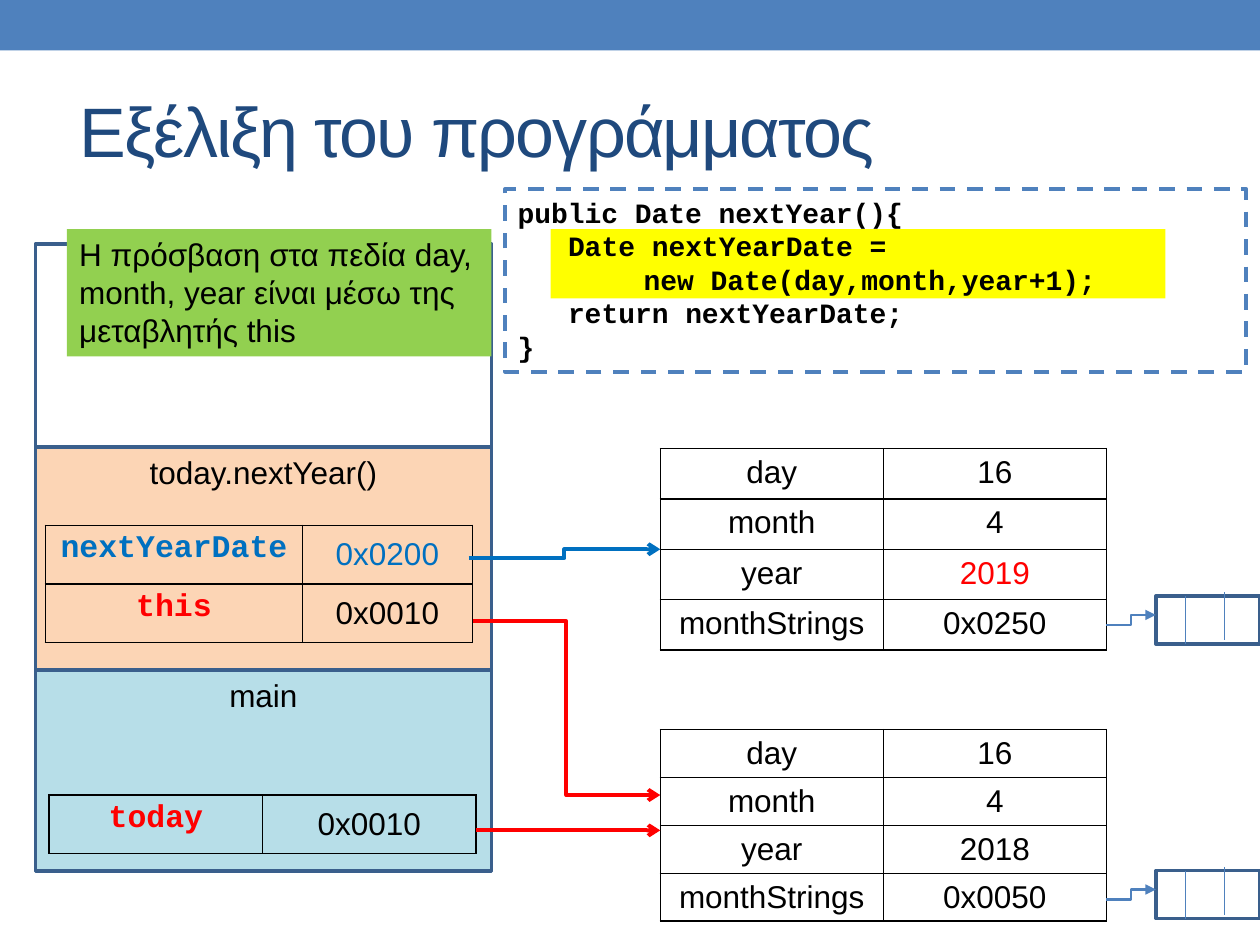
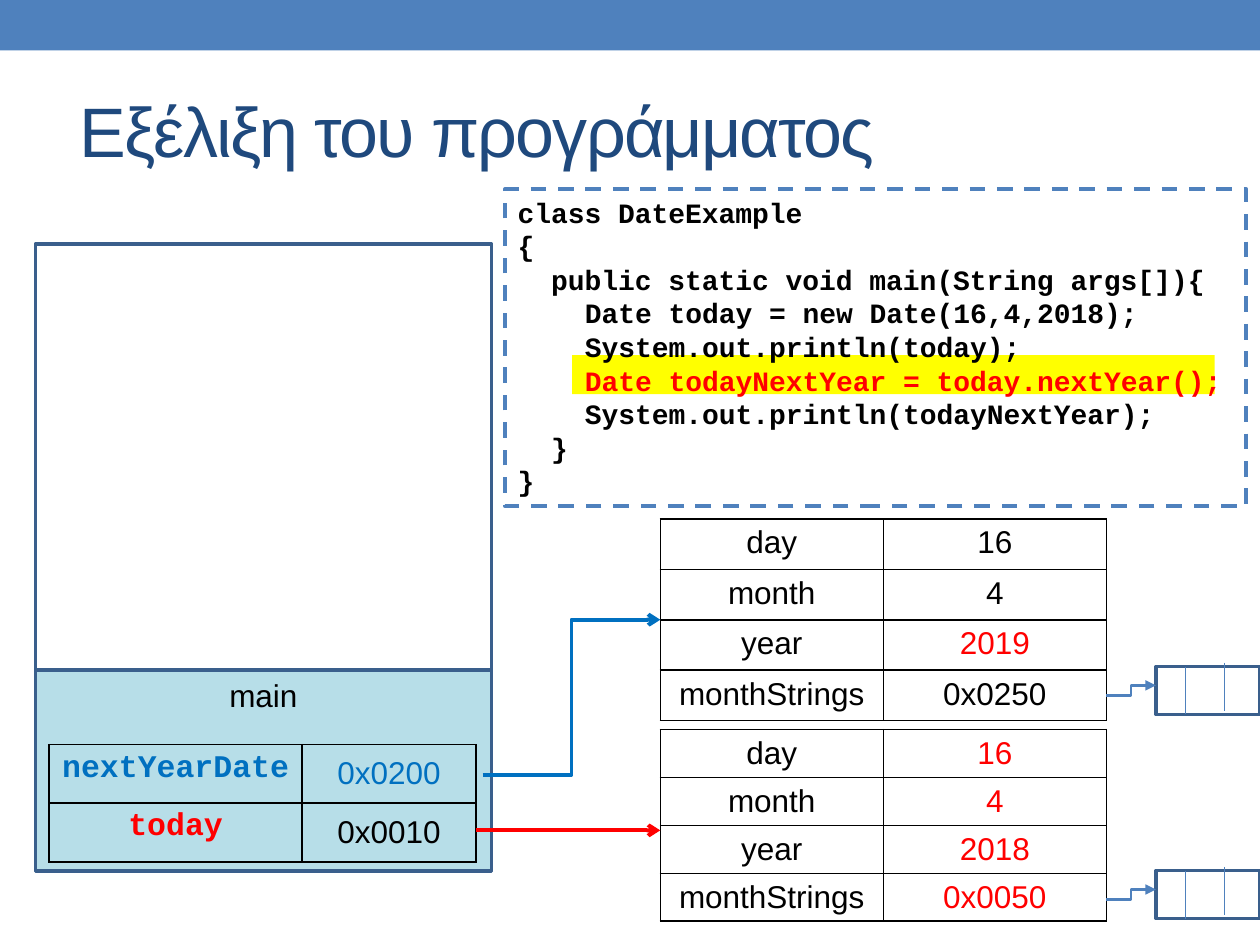
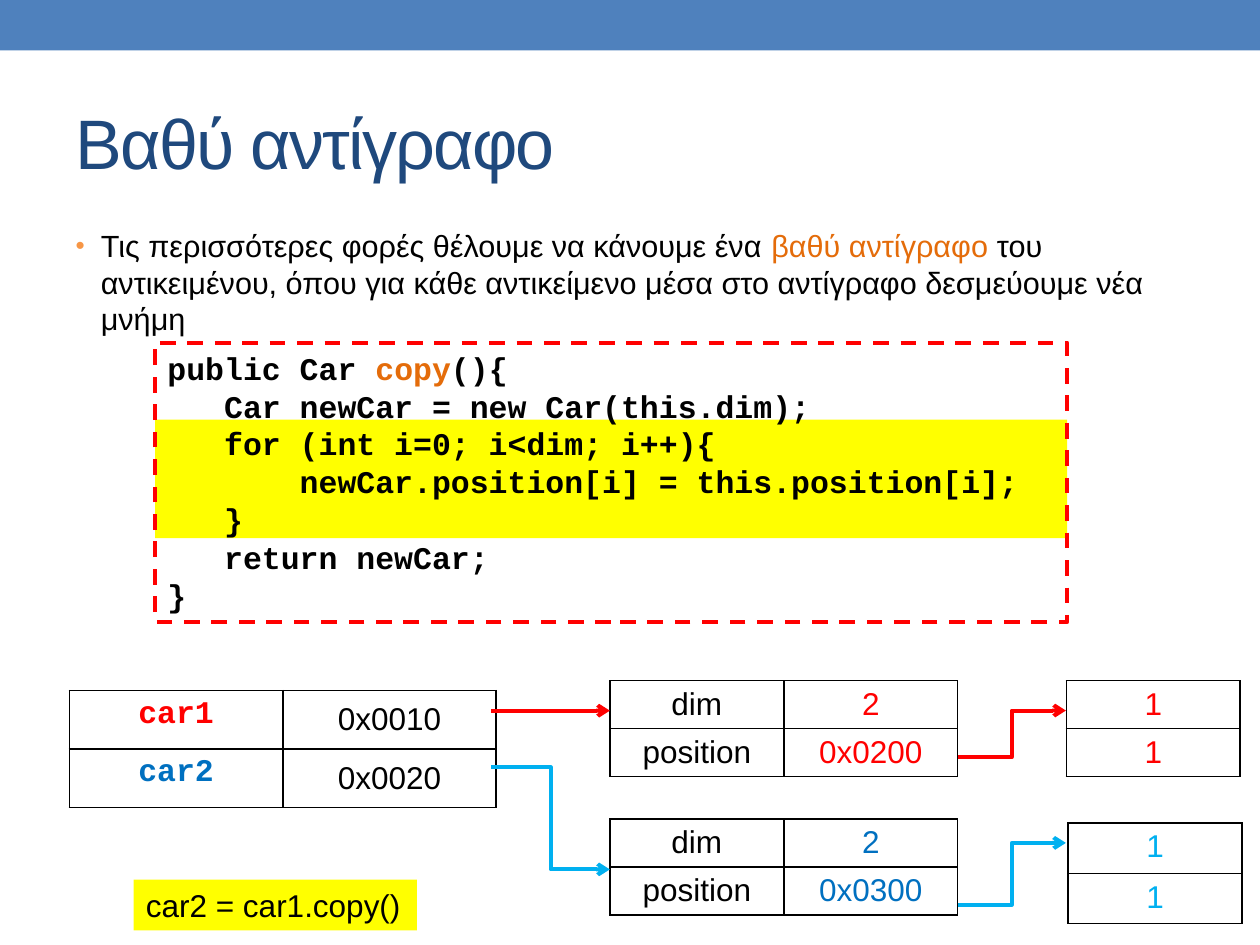
from lxml.etree import SubElement
from pptx import Presentation
from pptx.dml.color import RGBColor
from pptx.enum.dml import MSO_LINE
from pptx.enum.shapes import MSO_CONNECTOR as CONN, MSO_SHAPE as SHAPE
from pptx.enum.text import MSO_ANCHOR as ANCHOR, MSO_AUTO_SIZE as FIT, PP_ALIGN as ALIGN
from pptx.oxml.ns import qn
from pptx.util import Pt

rgb = RGBColor.from_string
BLACK, RED, BLUE, SKY = "000000", "FF0000", "0070C0", "00B0F0"
ACCENT, EDGE, NAVY, ORANGE, YELLOW = "4F81BD", "3A5F8C", "1F497D", "E46C0A", "FFFF00"
SANS, MONO = "Arial", "Courier New"


def style(shape, fill=None, line=None, width=2.08):
    shape.shadow.inherit = False
    if fill:
        shape.fill.solid()
        shape.fill.fore_color.rgb = rgb(fill)
    else:
        shape.fill.background()
    if line:
        shape.line.color.rgb = rgb(line)
        shape.line.width = Pt(width)
    else:
        shape.line.fill.background()


def write(p, text, size=18, font=SANS, bold=False, align=ALIGN.LEFT):
    """Fill a paragraph with a black string or a list of (text, colour) pieces."""
    pieces = [(text, BLACK)] if isinstance(text, str) else text
    p.text = pieces[0][0]
    for piece, _ in pieces[1:]:
        p.add_run().text = piece
    p.alignment = align
    for r, (_, color) in zip(p.runs, pieces):
        r.font.size, r.font.name, r.font.bold = Pt(size), font, bold
        r.font.color.rgb = rgb(color)


# Box kinds: fill, line, line width, dashed, text size, font, bold, alignment
KINDS = {
    "highlight": (YELLOW, None, 0, False, 18, SANS, False, ALIGN.LEFT),
    "note": ("92D050", None, 0, False, 18, SANS, False, ALIGN.LEFT),
    "stack": (None, EDGE, 2.08, False, 18, SANS, False, ALIGN.CENTER),
    "main": ("B7DEE8", EDGE, 2.08, False, 18, SANS, False, ALIGN.CENTER),
    "call": ("FCD5B5", EDGE, 2.08, False, 18, SANS, False, ALIGN.CENTER),
    "code": (None, ACCENT, 2.25, True, 16, MONO, True, ALIGN.LEFT),
    "copy code": (None, RED, 2.25, True, 18, MONO, True, ALIGN.LEFT),
}

# Parts that recur on the memory slides
OBJ_X, OBJ_COLS = 377.3, [127.5, 127.5]
VAR_ROW, ROW, TALL_ROW = 33.5, 27.3, 28.8
main_box = ("main", 20.2, 383, 260.6, 114.5, [(0, "main")])
stack_box = ("stack", 20.2, 139.5, 260.6, 358.5, [])
today_arrow = (272.2, 474.5, OBJ_X, 474.5, RED)
next_year_object = [["day", "16"], ["month", "4"], ["year", [("2019", RED)]],
                    ["monthStrings", "0x0250"]]
today_object = [["day", "16"], ["month", "4"], ["year", "2018"], ["monthStrings", "0x0050"]]
red_today_object = [[name, [(value, RED)]] for name, value in today_object]
next_year_var = [[("nextYearDate", BLUE)], [("0x0200", BLUE)]]
today_var = [[("today", RED)], "0x0010"]
red_ones, sky_ones = [[[("1", c)]] * 1 for c in (RED, RED)], [[[("1", c)]] for c in (SKY, SKY)]

# Boxes: kind, x, y, w, h, lines of (indent, text)
# Tables: x, y, column widths, row height, rows
# Arrows: x1, y1, x2, y2, colour
SLIDES = [
    dict(
        title="Εξέλιξη του προγράμματος", title_at=(38.2, 35.3), body=None,
        boxes=[
            ("highlight", 314.6, 131, 351.4, 39.6, []),
            main_box,
            stack_box,
            ("call", 20.2, 255.6, 260.6, 127.4, [(0, "today.nextYear()")]),
            ("code", 288.7, 108, 423.4, 104.4, [
                (0, "public Date nextYear(){"),
                (28.8, "Date nextYearDate ="),
                (72, "new Date(day,month,year+1);"),
                (28.8, "return nextYearDate;"),
                (0, "}")]),
            ("note", 38.2, 131, 242.6, 72.7, [
                (0, "H πρόσβαση στα πεδία day, month, year είναι μέσω της μεταβλητής this")]),
        ],
        tables=[
            (28.1, 454.3, [122, 122], VAR_ROW, [today_var]),
            (25.9, 300.2, [147, 97], VAR_ROW, [next_year_var, [[("this", RED)], "0x0010"]]),
            (OBJ_X, 416.9, OBJ_COLS, ROW, today_object),
            (OBJ_X, 256.3, OBJ_COLS, TALL_ROW, next_year_object),
        ],
        arrows=[today_arrow, (270, 355, OBJ_X, 454.3, RED), (267.8, 319, OBJ_X, 313.9, BLUE)],
        arrays=[340.6, 497.5],
    ),
    dict(
        title="Εξέλιξη του προγράμματος", title_at=(38.2, 35.3), body=None,
        boxes=[
            ("highlight", 326.9, 203, 367.2, 22.3, []),
            main_box,
            stack_box,
            ("code", 288.7, 108, 423.4, 181.4, [
                (0, "class DateExample"),
                (0, "{"),
                (19.2, "public static void main(String args[]){"),
                (38.4, "Date today = new Date(16,4,2018);"),
                (38.4, "System.out.println(today);"),
                (38.4, [("Date todayNextYear = today.nextYear();", RED)]),
                (38.4, "System.out.println(todayNextYear);"),
                (19.2, "}"),
                (0, "}")]),
        ],
        tables=[
            (28.1, 425.5, [144.5, 99.5], VAR_ROW, [next_year_var, today_var]),
            (OBJ_X, 416.9, OBJ_COLS, ROW, red_today_object),
            (OBJ_X, 296.6, OBJ_COLS, TALL_ROW, next_year_object),
        ],
        arrows=[today_arrow, (275.8, 442.8, OBJ_X, 354.2, BLUE)],
        arrays=[380.9, 497.5],
    ),
    dict(
        title="Βαθύ αντίγραφο", title_at=(36, 41.8),
        body=[("Τις περισσότερες φορές θέλουμε να κάνουμε ένα ", BLACK),
              ("βαθύ αντίγραφο ", ORANGE),
              ("του αντικειμένου, όπου για κάθε αντικείμενο μέσα στο αντίγραφο "
               "δεσμεύουμε νέα μνήμη", BLACK)],
        boxes=[
            ("highlight", 88.6, 239.8, 521.3, 67.7, []),
            ("copy code", 88.6, 195.8, 521.3, 159.8, [
                (0, [("public Car ", BLACK), ("copy", ORANGE), ("(){", BLACK)]),
                (32.4, "Car newCar = new Car(this.dim);"),
                (32.4, "for (int i=0; i<dim; i++){"),
                (75.6, "newCar.position[i] = this.position[i];"),
                (32.4, "}"),
                (32.4, "return newCar;"),
                (0, "}")]),
            ("highlight", 76.3, 502.6, 162, 29, [(0, "car2 = car1.copy()")]),
        ],
        tables=[
            (39.6, 394.6, [122, 122], VAR_ROW, [[[("car1", RED)], "0x0010"],
                                                [[("car2", BLUE)], "0x0020"]]),
            (348.5, 389, [99.4, 99.4], ROW, [["dim", [("2", RED)]],
                                             ["position", [("0x0200", RED)]]]),
            (348.5, 468, [99.4, 99.4], ROW, [["dim", [("2", BLUE)]],
                                             ["position", [("0x0300", BLUE)]]]),
            (609.3, 389, [99.4], ROW, red_ones),
            (610.4, 470.2, [99.4], TALL_ROW, sky_ones),
        ],
        arrows=[
            (280.8, 406.1, 348.5, 406.1, RED),
            (547.2, 432.7, 609.1, 406.1, RED),
            (280.8, 438.5, 348.5, 496.8, SKY),
            (547.2, 517, 609.1, 481.7, SKY),
        ],
        arrays=[],
    ),
]

prs = Presentation()
prs.slide_width, prs.slide_height = Pt(720), Pt(540)

for number, data in enumerate(SLIDES):
    s = prs.slides.add_slide(prs.slide_layouts[1 if data["body"] else 5])

    # Top band, moved once to the master
    if number == 0:
        band = s.shapes.add_shape(SHAPE.RECTANGLE, 0, 0, Pt(720), Pt(28.8))
        style(band, ACCENT)
        prs.slide_master.shapes.element.insert(2, band.element)

    # Title
    title = s.shapes.title
    title.left, title.top = [Pt(v) for v in data["title_at"]]
    title.width, title.height = Pt(648), Pt(77.8)
    tf = title.text_frame
    tf.vertical_anchor = ANCHOR.MIDDLE
    p = tf.paragraphs[0]
    write(p, [(data["title"], NAVY)], 40)
    p.runs[0].font._element.set("spc", "-100")

    # Bulleted text
    if data["body"]:
        body = s.placeholders[1]
        body.left, body.top, body.width, body.height = Pt(36), Pt(126), Pt(648), Pt(64.8)
        tf = body.text_frame
        tf.auto_size = FIT.NONE
        p = tf.paragraphs[0]
        write(p, data["body"], 17.5)
        pPr = p._p.get_or_add_pPr()
        pPr.set("marL", str(Pt(14.4)))
        pPr.set("indent", str(Pt(-14.4)))
        SubElement(SubElement(pPr, qn("a:buClr")), qn("a:srgbClr"), val="F79646")
        SubElement(pPr, qn("a:buSzPct"), val="85000")
        SubElement(pPr, qn("a:buChar"), char="•")

    # Boxes: memory stack, code, highlights and notes
    for kind, x, y, w, h, lines in data["boxes"]:
        fill, line, width, dashed, size, font, bold, align = KINDS[kind]
        box = s.shapes.add_shape(SHAPE.RECTANGLE, Pt(x), Pt(y), Pt(w), Pt(h))
        style(box, fill, line, width)
        if dashed:
            box.line.dash_style = MSO_LINE.DASH
        tf = box.text_frame
        tf.word_wrap = True
        tf.vertical_anchor = ANCHOR.TOP
        for i, (indent, text) in enumerate(lines):
            p = tf.add_paragraph() if i else tf.paragraphs[0]
            write(p, text, size, font, bold, align)
            if indent:
                p._p.get_or_add_pPr().set("marL", str(Pt(indent)))

    # Tables of variables and objects
    for x, y, widths, row_h, rows in data["tables"]:
        tbl = s.shapes.add_table(len(rows), len(widths), Pt(x), Pt(y),
                                 Pt(sum(widths)), Pt(row_h * len(rows))).table
        tbl.first_row = tbl.horz_banding = False
        for col, width in zip(tbl.columns, widths):
            col.width = Pt(width)
        for i, row in enumerate(rows):
            tbl.rows[i].height = Pt(row_h)
            for j, text in enumerate(row):
                cell = tbl.cell(i, j)
                is_name = row_h == VAR_ROW and j == 0
                is_value = row_h == VAR_ROW and j == 1
                write(cell.text_frame.paragraphs[0], text, 18, MONO if is_name else SANS,
                      is_name, ALIGN.CENTER)
                cell.vertical_anchor = ANCHOR.MIDDLE if is_value else ANCHOR.TOP
                tcPr = cell._tc.get_or_add_tcPr()
                for side in ("lnL", "lnR", "lnT", "lnB"):
                    ln = SubElement(tcPr, qn(f"a:{side}"), w=str(Pt(1)))
                    SubElement(SubElement(ln, qn("a:solidFill")), qn("a:srgbClr"), val=BLACK)
                cell.fill.background()

    # Month string arrays with their dividers and pointers
    links = [arrow + (2.25, "arrow") for arrow in data["arrows"]]
    for y in data["arrays"]:
        array = s.shapes.add_shape(SHAPE.RECTANGLE, Pt(660.5), Pt(y), Pt(59.5), Pt(27.4))
        style(array, None, EDGE)
        links += [(632.2, y + 16.6, 660.5, y + 10.8, ACCENT, 1.5, "triangle"),
                  (677.5, y, 677.5, y + 27.4, ACCENT, 0.75, None),
                  (699.8, y - 2.2, 699.8, y + 25.2, ACCENT, 0.75, None)]

    # Arrows and dividers
    for x1, y1, x2, y2, color, width, head in links:
        route = CONN.STRAIGHT if x1 == x2 or y1 == y2 else CONN.ELBOW
        link = s.shapes.add_connector(route, Pt(x1), Pt(y1), Pt(x2), Pt(y2))
        link.line.color.rgb = rgb(color)
        link.line.width = Pt(width)
        if head:
            SubElement(link.line._get_or_add_ln(), qn("a:tailEnd"), type=head)
        SubElement(link.element.spPr, qn("a:effectLst"))

prs.save("out.pptx")
